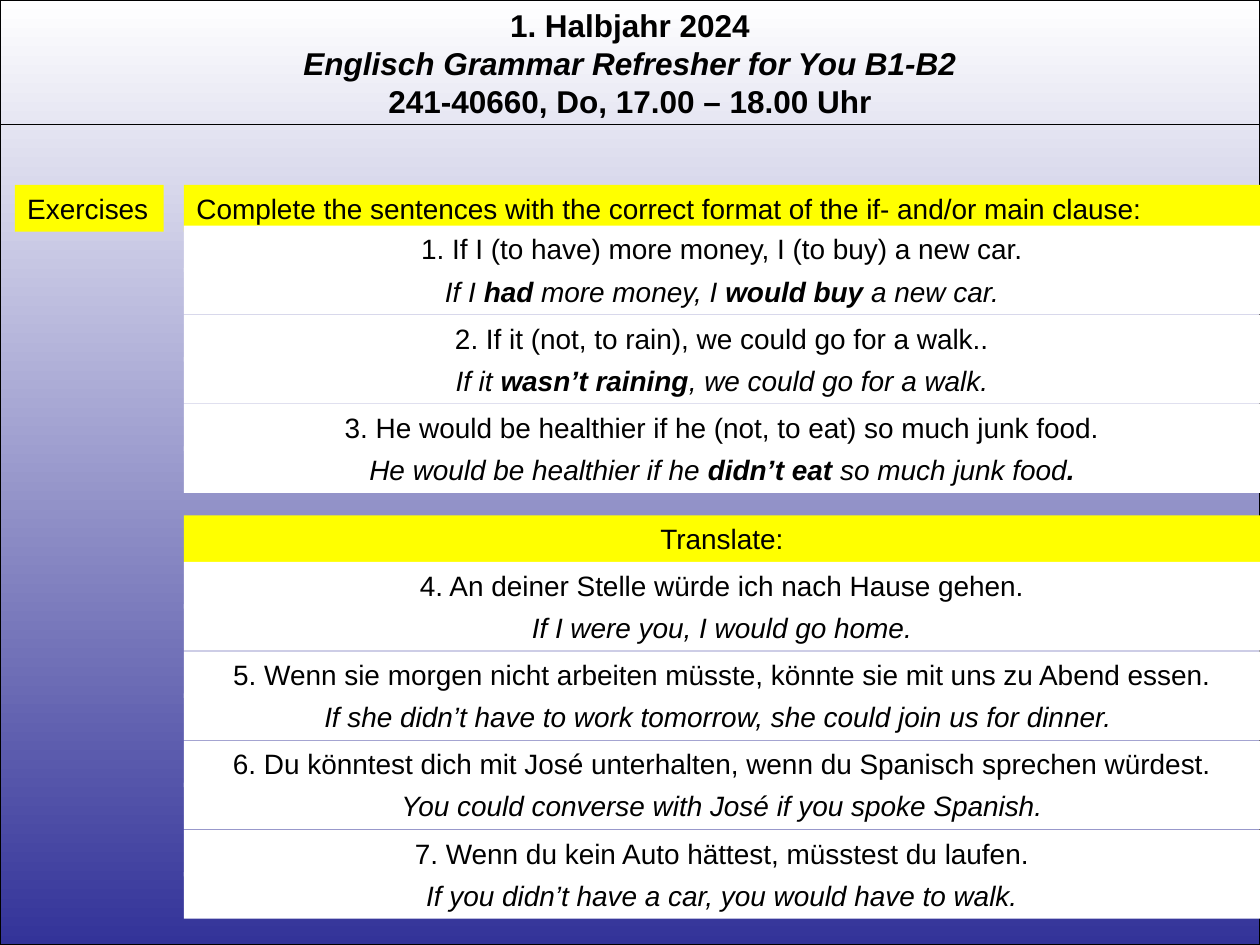
from dataclasses import dataclass

import pptx
import pptx.dml.color
import pptx.enum.shapes
import pptx.enum.text
import pptx.oxml
import pptx.util
from pptx.util import Cm

RGB = pptx.dml.color.RGBColor
ALIGN = pptx.enum.text.PP_ALIGN


@dataclass(frozen=True)
class Theme:
    font: str = "Arial"
    title: pptx.util.Pt = pptx.util.Pt(18)
    body: pptx.util.Pt = pptx.util.Pt(16)
    line: pptx.util.Pt = pptx.util.Pt(0.75)
    black: RGB = RGB(0, 0, 0)
    white: RGB = RGB(255, 255, 255)
    yellow: RGB = RGB(255, 255, 0)
    indigo: RGB = RGB(0x33, 0x33, 0x99)


@dataclass(frozen=True)
class Bar:
    left: float
    top: float
    width: float
    text: str
    fill: RGB
    align: ALIGN = ALIGN.CENTER
    italic: bool = False


@dataclass(frozen=True)
class Exercise:
    task: str
    answer: str


THEME = Theme()
SLIDE_W, SLIDE_H = 25.4, 19.05
BAR_H = 0.94
COL_X, COL_W = 3.71, 21.69
HEAD_Y, TRANSLATE_Y = 3.73, 10.39
PITCH, ANSWER_DY = 1.8, 0.85

TITLE = [
    ("1. Halbjahr 2024", False),
    ("Englisch Grammar Refresher for You B1-B2", True),
    ("241-40660, Do, 17.00 – 18.00 Uhr", False),
]
CLAUSES = [
    Exercise("1. If I (to have) more money, I (to buy) a new car.",
             "If I *had* more money, I *would buy *a new car."),
    Exercise("2. If it (not, to rain), we could go for a walk..",
             "If it *wasn’t raining*, we could go for a walk."),
    Exercise("3. He would be healthier if he (not, to eat) so much junk food.",
             "He would be healthier if he *didn’t eat *so much junk food*.*"),
]
TRANSLATIONS = [
    Exercise("4. An deiner Stelle würde ich nach Hause gehen.",
             "If I were you, I would go home."),
    Exercise("5. Wenn sie morgen nicht arbeiten müsste, könnte sie mit uns zu Abend essen.",
             "If she didn’t have to work tomorrow, she could join us for dinner. "),
    Exercise("6. Du könntest dich mit José unterhalten, wenn du Spanisch sprechen würdest.",
             "You could converse with José if you spoke Spanish."),
    Exercise("7. Wenn du kein Auto hättest, müsstest du laufen.",
             "If you didn’t have a car, you would have to walk."),
]


def add_run(p, text: str, **formats) -> None:
    r = p.add_run()
    r.text = text
    for name, value in {"name": THEME.font, **formats}.items():
        setattr(r.font, name, value)
    r.font.color.rgb = THEME.black


def fit_text(tf) -> None:
    formats = {
        "word_wrap": True,
        "auto_size": pptx.enum.text.MSO_AUTO_SIZE.SHAPE_TO_FIT_TEXT,
        "vertical_anchor": pptx.enum.text.MSO_ANCHOR.TOP,
    }
    for name, value in formats.items():
        setattr(tf, name, value)


def add_rect(s, left: float, top: float, width: float, height: float):
    sp = s.shapes.add_shape(pptx.enum.shapes.MSO_SHAPE.RECTANGLE,
                            Cm(left), Cm(top), Cm(width), Cm(height))
    sp.shadow.inherit = False
    return sp


def add_backdrop(s) -> None:
    sp = add_rect(s, 0, 0, SLIDE_W, SLIDE_H)
    sp.fill.gradient()
    sp.fill.gradient_angle = 270
    for stop, color in zip(sp.fill.gradient_stops, (THEME.white, THEME.indigo)):
        stop.color.rgb = color
    sp.line.color.rgb = THEME.black
    sp.line.width = THEME.line


def add_title(s) -> None:
    tf = s.shapes.add_textbox(0, 0, Cm(SLIDE_W), Cm(2.57)).text_frame
    fit_text(tf)
    for i, (text, italic) in enumerate(TITLE):
        p = tf.add_paragraph() if i else tf.paragraphs[0]
        p.alignment = ALIGN.CENTER
        add_run(p, text, size=THEME.title, bold=True, italic=italic)


def add_rule(s, y: float) -> None:
    line = s.shapes.add_connector(pptx.enum.shapes.MSO_CONNECTOR.STRAIGHT,
                                  0, Cm(y), Cm(SLIDE_W), Cm(y))
    line.line.color.rgb = THEME.black
    line.line.width = THEME.line
    sp_pr = line._element.spPr
    sp_pr.append(pptx.oxml.parse_xml(
        '<a:effectLst xmlns:a="http://schemas.openxmlformats.org/drawingml/2006/main"/>'))


def add_bar(s, bar: Bar) -> None:
    sp = add_rect(s, bar.left, bar.top, bar.width, BAR_H)
    sp.fill.solid()
    sp.fill.fore_color.rgb = bar.fill
    sp.line.fill.background()
    fit_text(sp.text_frame)
    p = sp.text_frame.paragraphs[0]
    p.alignment = bar.align
    for i, text in enumerate(bar.text.split("*")):
        if text:
            add_run(p, text, size=THEME.body, bold=i % 2 == 1, italic=bar.italic)


def add_exercises(s, top: float, exercises: list[Exercise]) -> None:
    for i, exercise in enumerate(exercises):
        y = top + i * PITCH
        add_bar(s, Bar(COL_X, y, COL_W, exercise.task, THEME.white))
        add_bar(s, Bar(COL_X, y + ANSWER_DY, COL_W, exercise.answer,
                       THEME.white, italic=True))


def main() -> None:
    prs = pptx.Presentation()
    prs.slide_width, prs.slide_height = Cm(SLIDE_W), Cm(SLIDE_H)
    s = prs.slides.add_slide(prs.slide_layouts[6])
    add_backdrop(s)
    add_title(s)
    add_rule(s, 2.51)
    add_bar(s, Bar(0.3, HEAD_Y, 3, "Exercises", THEME.yellow, ALIGN.LEFT))
    add_bar(s, Bar(COL_X, HEAD_Y, COL_W,
                   "Complete the sentences with the correct format of the if- and/or main clause:",
                   THEME.yellow, ALIGN.LEFT))
    add_exercises(s, 4.55, CLAUSES)
    add_bar(s, Bar(COL_X, TRANSLATE_Y, COL_W, "Translate:", THEME.yellow))
    add_exercises(s, TRANSLATE_Y + BAR_H, TRANSLATIONS)
    prs.save("out.pptx")


if __name__ == "__main__":
    main()
